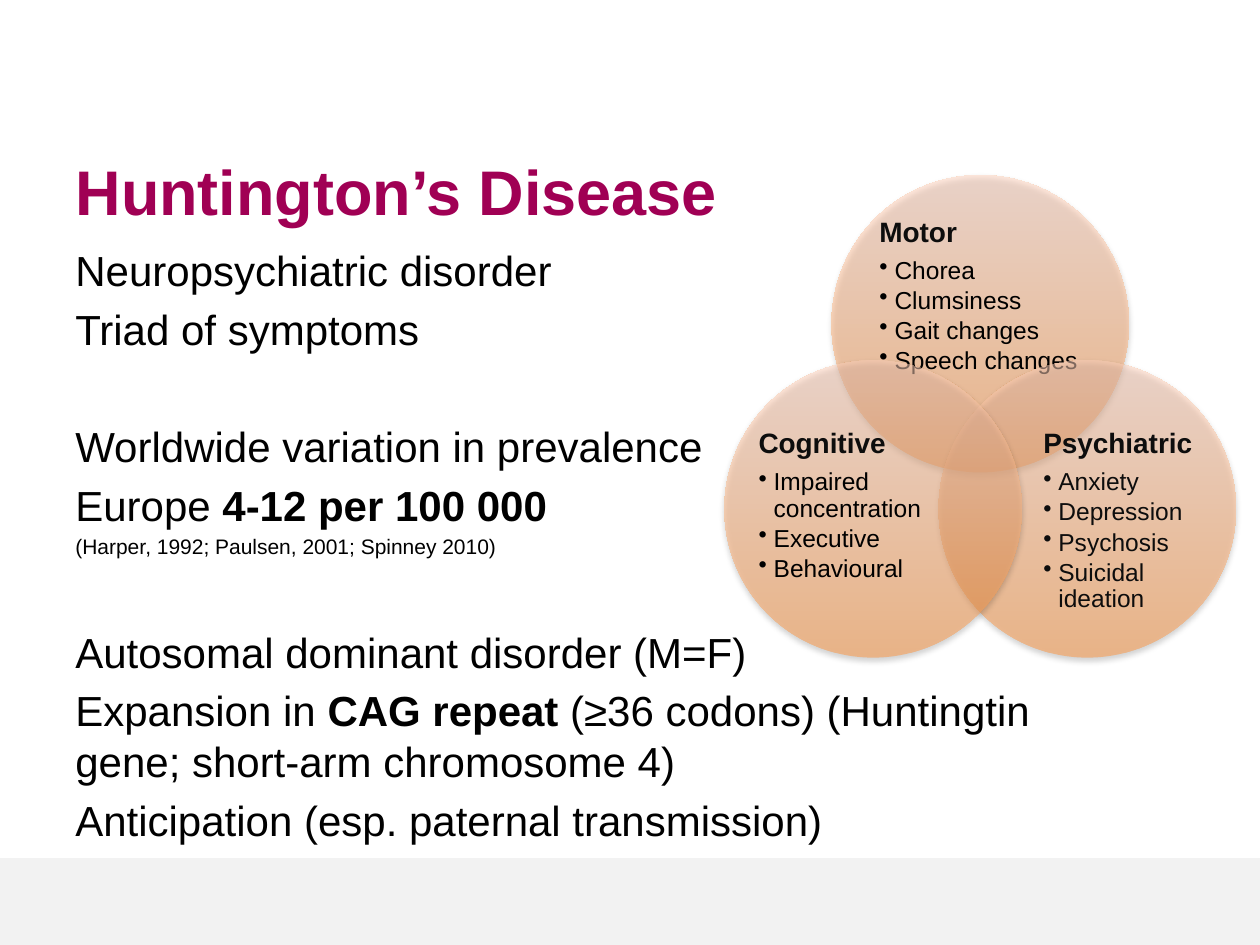
import dataclasses

import pptx
import pptx.dml.color
import pptx.enum.shapes
import pptx.enum.text
import pptx.oxml
import pptx.oxml.ns
import pptx.util

Inches = pptx.util.Inches
Pt = pptx.util.Pt
Anchor = pptx.enum.text.MSO_ANCHOR
Shape = pptx.enum.shapes.MSO_SHAPE


@dataclasses.dataclass(frozen=True)
class Theme:
    """Colours, font and type sizes of the slide."""
    font: str = "Arial"
    title: str = "A00054"
    text: str = "000000"
    heading: str = "0D0D0D"
    band: str = "F2F2F2"
    circle_low: str = "FF953E"
    circle_high: str = "FFD2BD"
    title_size: int = 36
    body_size: int = 24
    citation_size: int = 12
    heading_size: int = 16
    symptom_size: int = 14


THEME = Theme()
DIAMETER = 2.36
CENTRE_X = 7.78
OFFSET_X = 0.85
BLANK_LINE_GAP = 38.3

FACTS = [
    ([("Neuropsychiatric disorder", False)], THEME.body_size, 0),
    ([("Triad of symptoms", False)], THEME.body_size, 4.8),
    ([("Worldwide variation in prevalence", False)], THEME.body_size, BLANK_LINE_GAP),
    ([("Europe ", False), ("4-12 per 100 000", True)], THEME.body_size, 4.8),
    ([("(Harper, 1992; Paulsen, 2001; Spinney 2010)", False)], THEME.citation_size, 2.4),
    ([("Autosomal dominant disorder (M=F)", False)], THEME.body_size, BLANK_LINE_GAP),
    ([("Expansion in ", False), ("CAG repeat ", True),
      ("(≥36 codons) (Huntingtin gene; short-arm chromosome 4)", False)],
     THEME.body_size, 4.8),
    ([("Anticipation (esp. paternal transmission)", False)], THEME.body_size, 4.8),
]

TRIAD = [
    ("Motor", ["Chorea", "Clumsiness", "Gait changes", "Speech changes"],
     THEME.text, (CENTRE_X, 1.39), (6.98, 1.73, 1.73)),
    ("Psychiatric", ["Anxiety", "Depression", "Psychosis", "Suicidal ideation"],
     THEME.heading, (CENTRE_X + OFFSET_X, 2.86), (8.28, 3.41, 1.42)),
    ("Cognitive", ["Impaired concentration", "Executive", "Behavioural"],
     THEME.text, (CENTRE_X - OFFSET_X, 2.86), (6.02, 3.41, 1.42)),
]


def apply_format(target, values):
    """Set each named attribute of the target."""
    for name, value in values.items():
        setattr(target, name, value)


def rgb(value):
    """Return a colour from its hex digits."""
    return pptx.dml.color.RGBColor.from_string(value)


def add_run(paragraph, words, size, color, bold=False):
    """Append formatted words to a paragraph."""
    run = paragraph.add_run()
    run.text = words
    apply_format(run.font, {"name": THEME.font, "size": Pt(size), "bold": bold})
    run.font.color.rgb = rgb(color)


def next_paragraph(frame, index):
    """Return the first paragraph of a frame, or a new one."""
    return frame.add_paragraph() if index else frame.paragraphs[0]


def add_title(slide, words):
    """Place and fill the title placeholder."""
    title = slide.shapes.title
    apply_format(title, {"left": Inches(0.5), "top": Inches(1.12),
                         "width": Inches(8.57), "height": Inches(0.74)})
    apply_format(title.text_frame, {"vertical_anchor": Anchor.BOTTOM, "word_wrap": True,
                                    "auto_size": pptx.enum.text.MSO_AUTO_SIZE.NONE})
    paragraph = title.text_frame.paragraphs[0]
    paragraph.alignment = pptx.enum.text.PP_ALIGN.LEFT
    add_run(paragraph, words, THEME.title_size, THEME.title, True)


def add_band(slide):
    """Draw the pale band along the foot of the slide."""
    band = slide.shapes.add_shape(Shape.RECTANGLE, 0, Inches(6.81), Inches(10), Inches(0.69))
    band.shadow.inherit = False
    band.fill.solid()
    band.fill.fore_color.rgb = rgb(THEME.band)
    band.line.fill.background()


def add_facts(slide):
    """Write the facts about the disease."""
    frame = slide.shapes.add_textbox(
        Inches(0.5), Inches(1.89), Inches(8.57), Inches(4.89)).text_frame
    frame.word_wrap = True
    for index, (phrases, size, gap) in enumerate(FACTS):
        paragraph = next_paragraph(frame, index)
        paragraph.space_before = Pt(gap)
        for words, bold in phrases:
            add_run(paragraph, words, size, THEME.text, bold)


def add_circle(slide, centre_x, top):
    """Draw a translucent gradient circle with a soft shadow."""
    circle = slide.shapes.add_shape(
        Shape.OVAL, Inches(centre_x - DIAMETER / 2), Inches(top),
        Inches(DIAMETER), Inches(DIAMETER))
    circle.shadow.inherit = False
    circle.line.fill.background()
    circle.fill.gradient()
    circle.fill.gradient_angle = 90
    qn = pptx.oxml.ns.qn
    for stop, color in zip(circle.fill.gradient_stops, (THEME.circle_low, THEME.circle_high)):
        stop.color.rgb = rgb(color)
    namespace = pptx.oxml.ns.nsdecls("a")
    properties = circle.element.spPr
    for color in properties.find(qn("a:gradFill")).iter(qn("a:srgbClr")):
        color.append(pptx.oxml.parse_xml(f'<a:alpha {namespace} val="50000"/>'))
    properties.find(qn("a:effectLst")).append(pptx.oxml.parse_xml(
        f'<a:outerShdw {namespace} blurRad="40000" dist="23000" dir="5400000" '
        'rotWithShape="0"><a:srgbClr val="000000"><a:alpha val="35000"/>'
        '</a:srgbClr></a:outerShdw>'))


def add_bullet(paragraph):
    """Give a paragraph a hanging bullet."""
    properties = paragraph._p.get_or_add_pPr()
    properties.set("marL", str(Inches(0.12)))
    properties.set("indent", str(-Inches(0.12)))
    properties.append(pptx.oxml.parse_xml(
        f'<a:buChar {pptx.oxml.ns.nsdecls("a")} char="•"/>'))


def add_symptoms(slide, heading, symptoms, color, left, top, width):
    """Write a heading and its bulleted symptoms."""
    frame = slide.shapes.add_textbox(
        Inches(left), Inches(top), Inches(width), Inches(1.3)).text_frame
    apply_format(frame, {"word_wrap": True, "margin_left": 0, "margin_right": 0,
                         "margin_top": 0, "margin_bottom": 0})
    for index, words in enumerate([heading, *symptoms]):
        paragraph = next_paragraph(frame, index)
        if index:
            add_bullet(paragraph)
            add_run(paragraph, words, THEME.symptom_size, color)
        else:
            add_run(paragraph, words, THEME.heading_size, THEME.heading, True)
        apply_format(paragraph, {"line_spacing": 0.9,
                                 "space_after": Pt(2.1 if index else 5.6)})


def main():
    """Build and save the slide."""
    deck = pptx.Presentation()
    apply_format(deck, {"slide_width": Inches(10), "slide_height": Inches(7.5)})
    slide = deck.slides.add_slide(deck.slide_layouts[5])
    add_band(slide)
    add_title(slide, "Huntington’s Disease")
    add_facts(slide)
    for heading, symptoms, color, circle, words_place in TRIAD:
        add_circle(slide, *circle)
        add_symptoms(slide, heading, symptoms, color, *words_place)
    deck.save("out.pptx")


if __name__ == "__main__":
    main()
